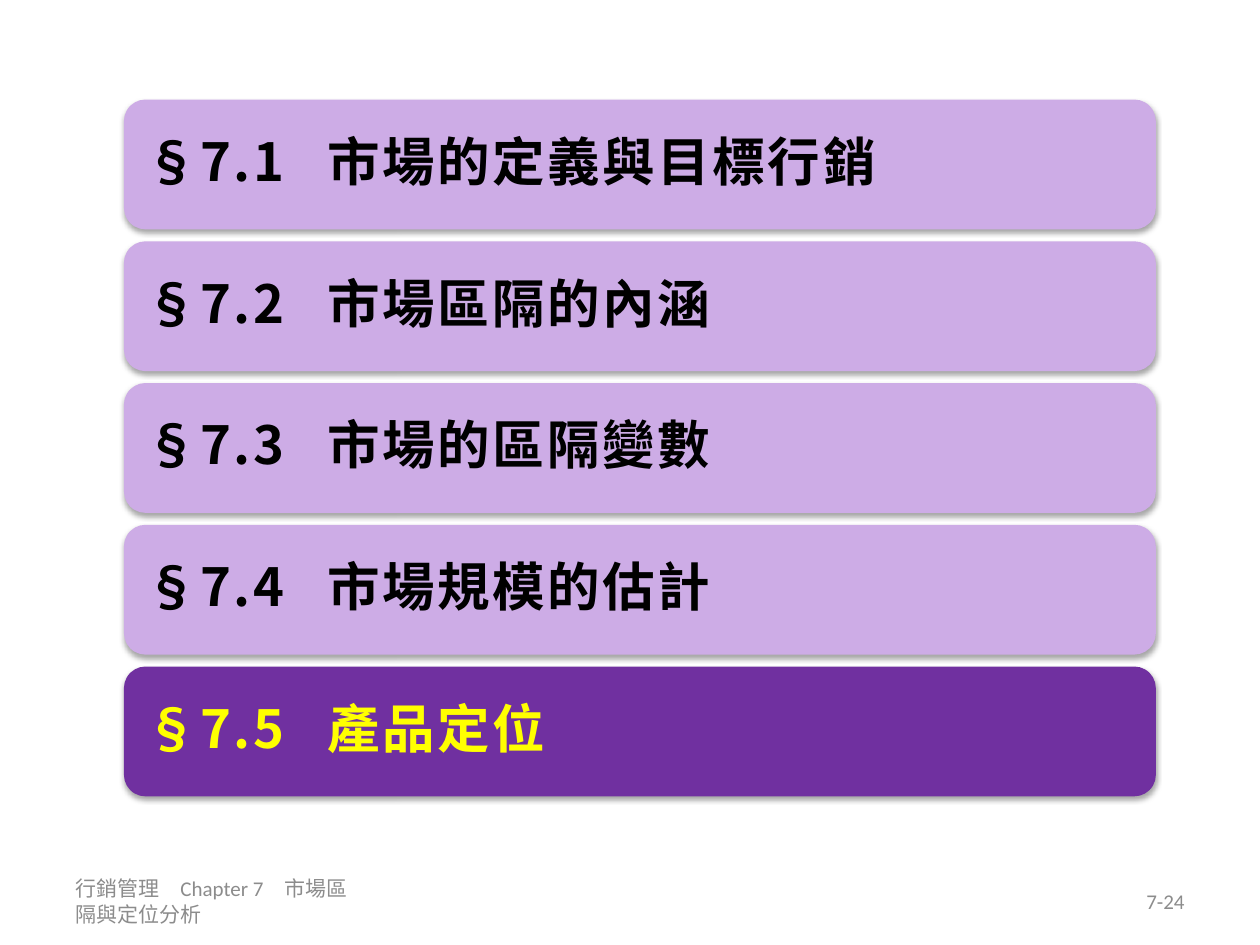
from dataclasses import dataclass
from typing import Any

import lxml.etree
import pptx
import pptx.dml.color
import pptx.enum.shapes
import pptx.enum.text
import pptx.oxml.ns
import pptx.util

Pt = pptx.util.Pt
Align = pptx.enum.text.PP_ALIGN
Anchor = pptx.enum.text.MSO_ANCHOR
qn = pptx.oxml.ns.qn

BAR_LEFT, BAR_TOP, BAR_WIDTH, BAR_HEIGHT = 70.8, 56.9, 589.7, 74.2
BAR_PITCH = 81
TITLE_TAB = 104
HEADING_FONT = "Noto Sans CJK SC"


@dataclass
class Section:
    number: str
    title: str
    fill: str = "CDACE6"
    color: str = "000000"


@dataclass
class FooterItem:
    text: str
    left: float
    alignment: Any
    margin_right: float


SECTIONS = [
    Section("§7.1", "市場的定義與目標行銷"),
    Section("§7.2", "市場區隔的內涵"),
    Section("§7.3", "市場的區隔變數"),
    Section("§7.4", "市場規模的估計"),
    Section("§7.5", "產品定位", "7030A0", "FFFF00"),
]

FOOTER_ITEMS = [
    FooterItem("行銷管理　Chapter 7　市場區隔與定位分析", 36, Align.LEFT, 0),
    FooterItem("7-24", 516, Align.RIGHT, 7.2),
]


def rgb(value: str) -> pptx.dml.color.RGBColor:
    return pptx.dml.color.RGBColor.from_string(value)


def apply_format(target: Any, values: dict[str, Any]) -> None:
    for name, value in values.items():
        setattr(target, name, value)


def add_element(parent: Any, tag: str, **attributes: Any) -> Any:
    texts = {name: str(value) for name, value in attributes.items()}
    return lxml.etree.SubElement(parent, qn(tag), texts)


def add_shadow(shape: Any) -> None:
    shape.shadow.inherit = False
    effects = shape._element.spPr.find(qn("a:effectLst"))
    shadow = add_element(effects, "a:outerShdw", blurRad=Pt(3.1), dist=Pt(1.8),
                         dir=90 * 60000, rotWithShape=0)
    color = add_element(shadow, "a:srgbClr", val="000000")
    add_element(color, "a:alpha", val=35000)


def add_section(slide: Any, section: Section, top: float) -> None:
    shape = slide.shapes.add_shape(
        pptx.enum.shapes.MSO_SHAPE.ROUNDED_RECTANGLE,
        Pt(BAR_LEFT), Pt(top), Pt(BAR_WIDTH), Pt(BAR_HEIGHT))
    shape.fill.solid()
    shape.fill.fore_color.rgb = rgb(section.fill)
    shape.line.fill.background()
    add_shadow(shape)
    frame = shape.text_frame
    margins = dict.fromkeys(
        ("margin_left", "margin_top", "margin_right", "margin_bottom"), Pt(8.64))
    apply_format(frame, {"word_wrap": True, "vertical_anchor": Anchor.MIDDLE, **margins})
    paragraph = frame.paragraphs[0]
    apply_format(paragraph, {"alignment": Align.LEFT, "line_spacing": 0.9,
                             "space_after": Pt(4)})
    tabs = add_element(paragraph._p.get_or_add_pPr(), "a:tabLst")
    add_element(tabs, "a:tab", pos=Pt(TITLE_TAB), algn="l")
    run = paragraph.add_run()
    run.text = f"{section.number}\t{section.title}"
    apply_format(run.font, {"size": Pt(30), "bold": True, "name": HEADING_FONT})
    run.font.color.rgb = rgb(section.color)
    properties = run._r.get_or_add_rPr()
    properties.set("spc", "150")
    add_element(properties, "a:ea", typeface=HEADING_FONT)


def add_footer_item(slide: Any, item: FooterItem) -> None:
    box = slide.shapes.add_textbox(Pt(item.left), Pt(500.5), Pt(168), Pt(28.8))
    frame = box.text_frame
    apply_format(frame, {"word_wrap": True, "vertical_anchor": Anchor.MIDDLE,
                         "margin_right": Pt(item.margin_right)})
    paragraph = frame.paragraphs[0]
    paragraph.alignment = item.alignment
    run = paragraph.add_run()
    run.text = item.text
    apply_format(run.font, {"size": Pt(12), "name": "Calibri"})
    run.font.color.rgb = rgb("8C8C8C")


def main() -> None:
    presentation = pptx.Presentation()
    apply_format(presentation, {"slide_width": Pt(720), "slide_height": Pt(540)})
    slide = presentation.slides.add_slide(presentation.slide_layouts[6])
    for item in FOOTER_ITEMS:
        add_footer_item(slide, item)
    for index, section in enumerate(SECTIONS):
        add_section(slide, section, BAR_TOP + index * BAR_PITCH)
    presentation.save("out.pptx")


if __name__ == "__main__":
    main()
